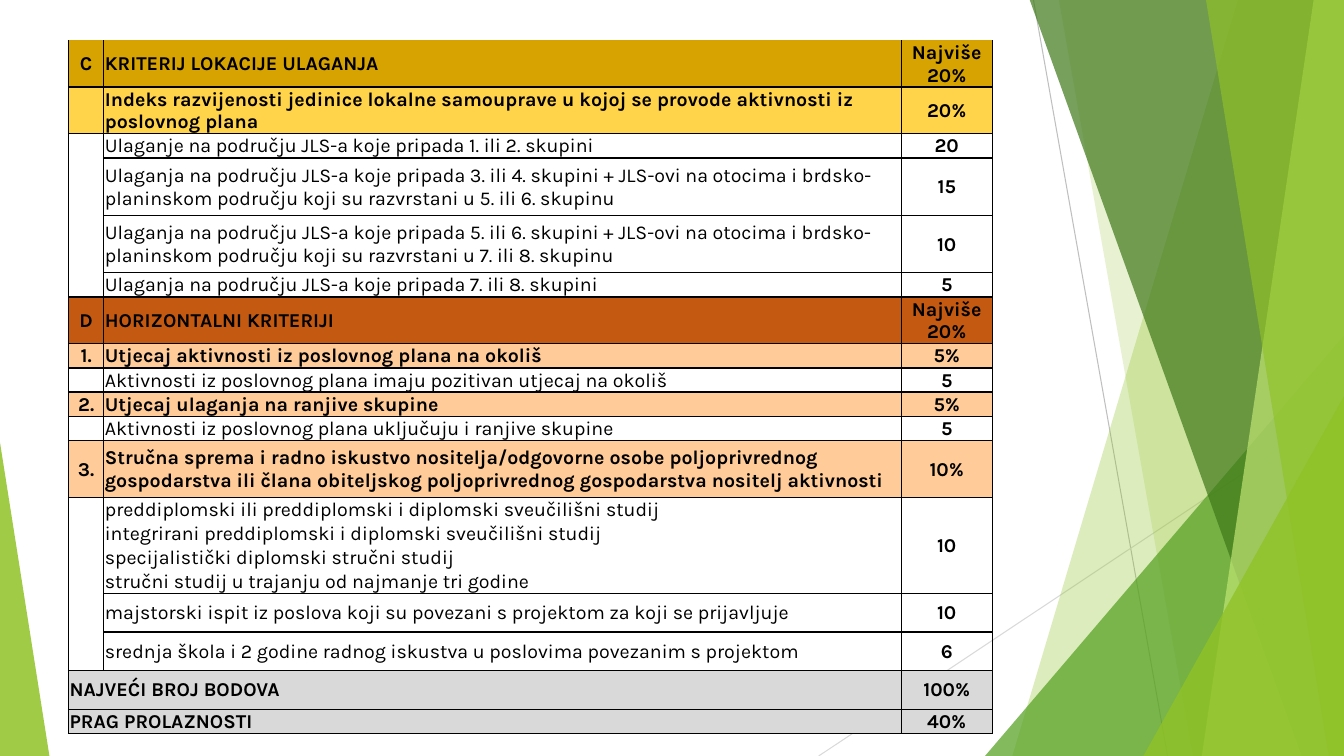
import pptx
import pptx.util
import pptx.dml.color
import pptx.enum.shapes
import pptx.enum.text
import pptx.oxml.ns
from lxml import etree

Inches = pptx.util.Inches
ALIGN = pptx.enum.text.PP_ALIGN
FONT, SIZE = "Karla", 14
SLIDE_WIDTH, SLIDE_HEIGHT = 13.33, 7.5

# Fills of (number, text, points); None leaves the cell clear
GOLD = ("D6A300",) * 3
YELLOW = ("FFD44B",) * 3
RUST = ("C45911",) * 3
PEACH = ("FFCC99",) * 3
GREY = ("D9D9D9",) * 3
WHITE = ("FFFFFF",) * 3
WHITE_ITEM = (None, "FFFFFF", "FFFFFF")
CLEAR = (None,) * 3

# height, fills, number, text, points
CRITERIA = [
    (0.41, GOLD, "C", "KRITERIJ LOKACIJE ULAGANJA", "Najviše 20%"),
    (0.38, YELLOW, "", "Indeks razvijenosti jedinice lokalne samouprave u kojoj se provode "
     "aktivnosti iz poslovnog plana", "20%"),
    (0.24, WHITE, "", "Ulaganje na području JLS-a koje pripada 1. ili 2. skupini", "20"),
    (0.57, WHITE, "", "Ulaganja na području JLS-a koje pripada 3. ili 4. skupini + JLS-ovi na "
     "otocima i brdsko-planinskom području koji su razvrstani u 5. ili 6. skupinu", "15"),
    (0.57, WHITE, "", "Ulaganja na području JLS-a koje pripada 5. ili 6. skupini + JLS-ovi na "
     "otocima i brdsko-planinskom području koji su razvrstani u 7. ili 8. skupinu", "10"),
    (0.24, WHITE, "", "Ulaganja na području JLS-a koje pripada 7. ili 8. skupini", "5"),
    (0.41, RUST, "D", "HORIZONTALNI KRITERIJI", "Najviše 20%"),
    (0.24, PEACH, "1.", "Utjecaj aktivnosti iz poslovnog plana na okoliš", "5%"),
    (0.24, WHITE_ITEM, "", "Aktivnosti iz poslovnog plana imaju pozitivan utjecaj na okoliš", "5"),
    (0.24, PEACH, "2.", "Utjecaj ulaganja na ranjive skupine", "5%"),
    (0.24, WHITE_ITEM, "", "Aktivnosti iz poslovnog plana uključuju i ranjive skupine", "5"),
    (0.57, PEACH, "3.", "Stručna sprema i radno iskustvo nositelja/odgovorne osobe "
     "poljoprivrednog gospodarstva ili člana obiteljskog poljoprivrednog gospodarstva "
     "nositelj aktivnosti", "10%"),
    (0.23, CLEAR, "", "preddiplomski ili preddiplomski i diplomski sveučilišni studij", "10"),
    (0.23, CLEAR, "", "integrirani preddiplomski i diplomski sveučilišni studij", ""),
    (0.23, CLEAR, "", "specijalistički diplomski stručni studij", ""),
    (0.24, CLEAR, "", "stručni studij u trajanju od najmanje tri godine", ""),
    (0.38, CLEAR, "", "majstorski ispit iz poslova koji su povezani s projektom za koji se "
     "prijavljuje", "10"),
    (0.38, CLEAR, "", "srednja škola i 2 godine radnog iskustva u poslovima povezanim s "
     "projektom", "6"),
    (0.39, GREY, "NAJVEĆI BROJ BODOVA", "", "100%"),
    (0.24, GREY, "PRAG PROLAZNOSTI", "", "40%"),
]
COLUMN_WIDTHS = [0.35, 7.91, 0.9]
MERGES = [(2, 0, 5, 0), (12, 0, 17, 0), (12, 2, 15, 2), (18, 0, 18, 1), (19, 0, 19, 1)]
DEGREE_ROWS = range(12, 16)


def color(value):
    return pptx.dml.color.RGBColor.from_string(value)


def fill_shape(shape, value, opacity):
    """Give a shape a translucent fill, no line and no shadow."""
    shape.shadow.inherit = False
    shape.line.fill.background()
    shape.fill.solid()
    shape.fill.fore_color.rgb = color(value)
    fill_color = shape.fill._xPr.find(".//" + pptx.oxml.ns.qn("a:srgbClr"))
    etree.SubElement(fill_color, pptx.oxml.ns.qn("a:alpha"), val=str(opacity * 1000))


def add_ray(slide, start, end, value):
    points = [Inches(length) for length in start + end]
    ray = slide.shapes.add_connector(pptx.enum.shapes.MSO_CONNECTOR.STRAIGHT, *points)
    ray.line.color.rgb = color(value)
    ray.line.width = pptx.util.Pt(0.75)
    etree.SubElement(ray._element.spPr, pptx.oxml.ns.qn("a:effectLst"))


def add_facet(slide, top_left, top_right, bottom_right, bottom_left, value, opacity):
    """Draw a four-sided facet over the full slide height from its x positions."""
    top, bottom = Inches(-0.01), Inches(SLIDE_HEIGHT)
    builder = slide.shapes.build_freeform(Inches(top_left), top)
    builder.add_line_segments([(Inches(top_right), top), (Inches(bottom_right), bottom),
                               (Inches(bottom_left), bottom)], close=True)
    fill_shape(builder.convert_to_shape(), value, opacity)


def add_triangle(slide, left, top, width, apex, value, opacity):
    """Draw a triangle standing on the bottom edge of the slide."""
    triangle = slide.shapes.add_shape(
        pptx.enum.shapes.MSO_SHAPE.ISOSCELES_TRIANGLE, Inches(left), Inches(top),
        Inches(width), Inches(SLIDE_HEIGHT - top))
    triangle.adjustments[0] = apex
    fill_shape(triangle, value, opacity)


def add_facets(slide, right):
    add_ray(slide, (10.25, 0), (11.58, SLIDE_HEIGHT), "BFBFBF")
    add_ray(slide, (right, 4.03), (8.12, SLIDE_HEIGHT), "D9D9D9")
    add_facet(slide, 12.28, right, right, 10.04, "90C226", 30)
    add_facet(slide, 10.5, right, right, 11.83, "90C226", 20)
    add_triangle(slide, 9.77, 3.33, right - 9.77, 1, "54A021", 72)
    add_facet(slide, 10.21, right, right, 12.91, "3F7819", 70)
    add_facet(slide, 13.03, right, right, 11.92, "C0E474", 70)
    add_facet(slide, 11.96, right, right, 13.18, "90C226", 65)
    add_triangle(slide, 11.34, 3.93, right - 11.34, 1, "90C226", 80)
    add_triangle(slide, 0, 4.39, 0.49, 0, "90C226", 85)


def write_text(cell, text, bold=True, align=ALIGN.LEFT):
    cell.margin_left = cell.margin_top = cell.margin_right = Inches(0.01)
    cell.margin_bottom = 0
    cell.vertical_anchor = pptx.enum.text.MSO_ANCHOR.MIDDLE
    paragraph = cell.text_frame.paragraphs[0]
    paragraph.alignment = align
    if text:
        run = paragraph.add_run()
        run.text = text
        run.font.name, run.font.size, run.font.bold = FONT, pptx.util.Pt(SIZE), bold
        run.font.color.rgb = color("000000")
    else:
        # Keeps an empty cell from stretching its row
        end = etree.SubElement(paragraph._p, pptx.oxml.ns.qn("a:endParaRPr"), sz=str(SIZE * 100))
        etree.SubElement(end, pptx.oxml.ns.qn("a:latin"), typeface=FONT)


def set_borders(cell, sides):
    """Draw black lines on the named sides; must run before the fill is set."""
    properties = cell._tc.get_or_add_tcPr()
    for side in "LRTB":
        line = etree.SubElement(properties, pptx.oxml.ns.qn("a:ln" + side), w="12700")
        if side in sides:
            solid = etree.SubElement(line, pptx.oxml.ns.qn("a:solidFill"))
            etree.SubElement(solid, pptx.oxml.ns.qn("a:srgbClr"), val="000000")
        else:
            etree.SubElement(line, pptx.oxml.ns.qn("a:noFill"))


def border_sides(row, column):
    if row == 0:
        return "LRB"
    if column == 1 and row in DEGREE_ROWS:
        top = "T" if row == DEGREE_ROWS[0] else ""
        bottom = "B" if row == DEGREE_ROWS[-1] else ""
        return "LR" + top + bottom
    return "LRTB"


def add_criteria_table(slide, left, top):
    width, height = sum(COLUMN_WIDTHS), sum(row[0] for row in CRITERIA)
    table = slide.shapes.add_table(len(CRITERIA), len(COLUMN_WIDTHS), Inches(left), Inches(top),
                                   Inches(width), Inches(height)).table
    table.first_row = table.horz_banding = False
    for column, column_width in zip(table.columns, COLUMN_WIDTHS):
        column.width = Inches(column_width)
    for row, (row_height, fills, *texts) in enumerate(CRITERIA):
        table.rows[row].height = Inches(row_height)
        plain = fills in (WHITE, WHITE_ITEM, CLEAR)
        text_align = ALIGN.JUSTIFY if fills is CLEAR else ALIGN.LEFT
        number_align = ALIGN.LEFT if fills is GREY else ALIGN.CENTER
        aligns = (number_align, text_align, ALIGN.CENTER)
        for column, (text, fill, align) in enumerate(zip(texts, fills, aligns)):
            cell = table.cell(row, column)
            write_text(cell, text, bold=column != 1 or not plain, align=align)
            set_borders(cell, border_sides(row, column))
            if fill:
                cell.fill.solid()
                cell.fill.fore_color.rgb = color(fill)
            else:
                cell.fill.background()
    for first_row, first_column, last_row, last_column in MERGES:
        table.cell(first_row, first_column).merge(table.cell(last_row, last_column))


def main():
    presentation = pptx.Presentation()
    presentation.slide_width = Inches(SLIDE_WIDTH)
    presentation.slide_height = Inches(SLIDE_HEIGHT)
    slide = presentation.slides.add_slide(presentation.slide_layouts[6])
    add_facets(slide, SLIDE_WIDTH)
    add_criteria_table(slide, 0.68, 0.4)
    presentation.save("out.pptx")


if __name__ == "__main__":
    main()
